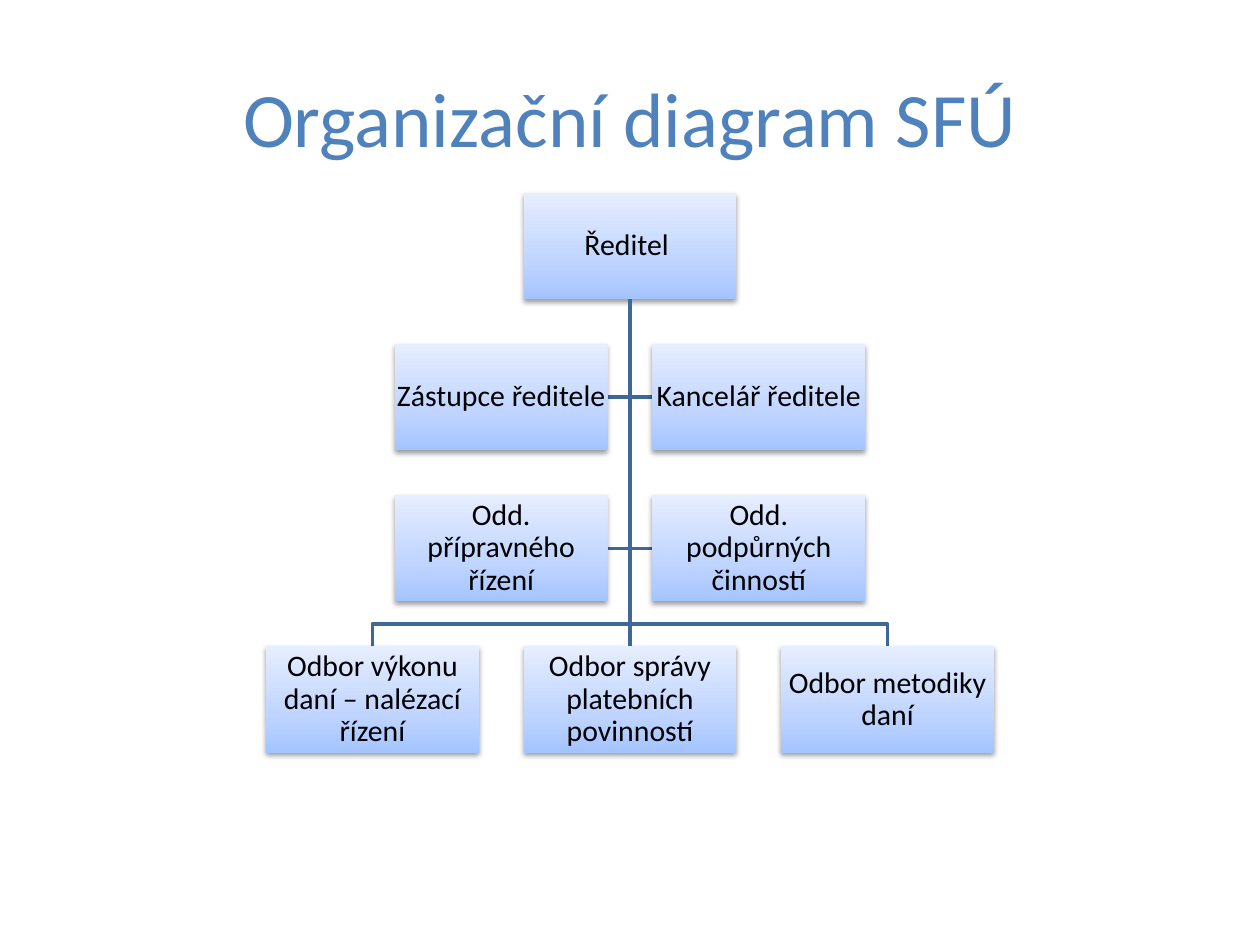
"""Builds the organisation chart slide."""
from copy import deepcopy

from lxml import etree
from pptx import Presentation
from pptx.dml.color import RGBColor
from pptx.enum import shapes, text
from pptx.oxml import ns
from pptx.util import Pt

COLORS = {
    "title": "4F81BD",
    "line": "3F6797",
    "text": "000000",
    "shadow": "000000",
    "low": "A4C4FF",
    "mid": "BFD4FF",
    "high": "E6EEFF",
}
FONT = "Calibri"
GAP = 0.21
DIRECTOR = "Ředitel "
STAFF = [
    ("Zástupce ředitele", "Kancelář ředitele"),
    ("Odd. přípravného řízení", "Odd. podpůrných činností"),
]
DEPARTMENTS = [
    "Odbor výkonu daní – nalézací řízení",
    "Odbor správy platebních povinností",
    "Odbor metodiky daní",
]


def rgb(name):
    """Return the named colour."""
    return RGBColor.from_string(COLORS[name])


def write(sp, words, size, color, inset):
    """Put centred text into a shape."""
    tf = sp.text_frame
    tf.word_wrap = True
    tf.vertical_anchor = text.MSO_ANCHOR.MIDDLE
    tf.margin_left = tf.margin_right = Pt(inset)
    tf.margin_top = tf.margin_bottom = Pt(inset)
    p = tf.paragraphs[0]
    p.text = words
    p.alignment = text.PP_ALIGN.CENTER
    p.font.name = FONT
    p.font.size = Pt(size)
    p.font.color.rgb = rgb(color)
    return p


def fill_gradient(sp):
    """Fill a shape with the three-stop vertical gradient."""
    sp.fill.gradient()
    sp.fill.gradient_angle = 90
    stops = sp._element.spPr.find(".//" + ns.qn("a:gsLst"))
    stops.insert(1, deepcopy(stops[0]))
    levels = [(0, "low"), (0.35, "mid"), (1, "high")]
    for stop, (position, color) in zip(sp.fill.gradient_stops, levels):
        stop.position = position
        stop.color.rgb = rgb(color)


def add_shadow(sp):
    """Give a shape a soft shadow below it."""
    sp.shadow.inherit = False
    effects = sp._element.spPr.find(ns.qn("a:effectLst"))
    shadow = etree.SubElement(
        effects, ns.qn("a:outerShdw"), blurRad=str(Pt(3.1)),
        dist=str(Pt(1.6)), dir="5400000", rotWithShape="0")
    color = etree.SubElement(shadow, ns.qn("a:srgbClr"), val=COLORS["shadow"])
    etree.SubElement(color, ns.qn("a:alpha"), val="38000")


def add_unit(s, words, x, y, w):
    """Add one unit box, half as high as it is wide."""
    sp = s.shapes.add_shape(
        shapes.MSO_SHAPE.RECTANGLE, Pt(x), Pt(y), Pt(w), Pt(w / 2))
    fill_gradient(sp)
    sp.line.fill.background()
    add_shadow(sp)
    write(sp, words, 17, "text", 0.85).line_spacing = 0.9
    return sp


def style_line(line):
    """Style a line of the chart."""
    line.color.rgb = rgb("line")
    line.width = Pt(2)


def join(s, upper, lower):
    """Join two boxes, one above the other, with a straight connector."""
    c = s.shapes.add_connector(shapes.MSO_CONNECTOR.STRAIGHT, 0, 0, 0, 0)
    c.begin_connect(upper, 2)
    c.end_connect(lower, 0)
    style_line(c.line)
    etree.SubElement(c._element.spPr, ns.qn("a:effectLst"))


def add_branch(s, start, *points):
    """Add an angled line through the given points."""
    builder = s.shapes.build_freeform(*map(Pt, start))
    builder.add_line_segments(
        [(Pt(x), Pt(y)) for x, y in points], close=False)
    sp = builder.convert_to_shape()
    sp.fill.background()
    sp.shadow.inherit = False
    style_line(sp.line)


def add_title(s, words, x, y, w, h):
    """Add the slide title."""
    sp = s.shapes.add_textbox(Pt(x), Pt(y), Pt(w), Pt(h))
    write(sp, words, 44, "title", 3.6)


def add_org_chart(s, x, y, w):
    """Add the chart, three boxes wide, from its top left corner."""
    box = w / (3 + 2 * GAP)
    gap = box * GAP
    across = box + gap
    down = box / 2 + gap
    last = y + 3 * down
    bus = last - gap / 2
    middle = x + w / 2
    root = (middle, y + box / 2)

    for side in (1, -1):
        for row in (2, 1):
            level = y + row * down + box / 4
            add_branch(s, root, (middle, level),
                       (middle + side * gap / 2, level))
        outer = middle + side * across
        add_branch(s, root, (middle, bus), (outer, bus), (outer, last))

    director = add_unit(s, DIRECTOR, x + across, y, box)
    units = [add_unit(s, words, x + i * across, last, box)
             for i, words in enumerate(DEPARTMENTS)]
    join(s, director, units[1])
    for row, pair in enumerate(STAFF, 1):
        for i, words in enumerate(pair):
            add_unit(s, words, x + (i + 0.5) * across, y + row * down, box)


def main():
    """Build and save the slide."""
    prs = Presentation()
    prs.slide_width, prs.slide_height = Pt(720), Pt(540)
    s = prs.slides.add_slide(prs.slide_layouts[6])
    add_title(s, "Organizační diagram SFÚ", 36, 21.6, 648, 90)
    add_org_chart(s, 152, 110.2, 416)
    prs.save("out.pptx")


if __name__ == "__main__":
    main()
